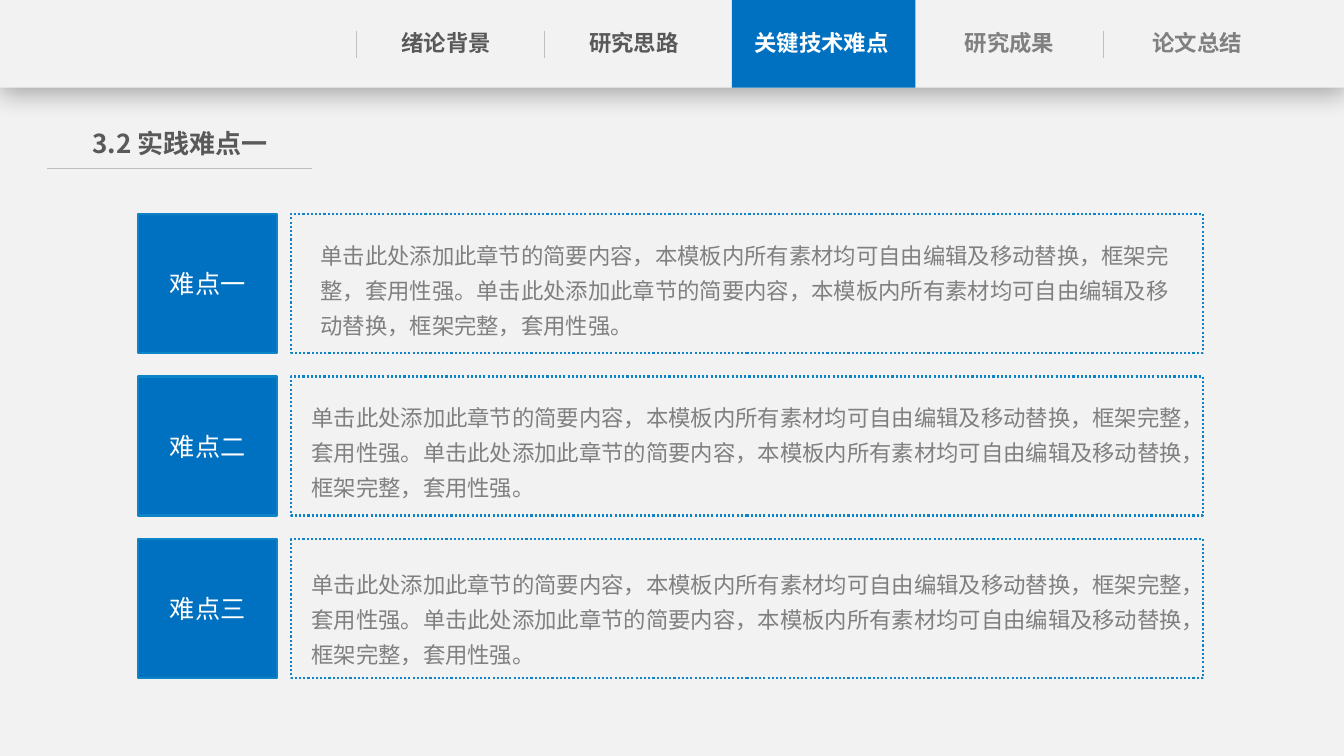
from dataclasses import dataclass

import pptx
import pptx.dml.color
import pptx.enum.dml
import pptx.enum.shapes
import pptx.enum.text
import pptx.oxml
import pptx.oxml.ns
import pptx.util
from pptx.util import Inches

RGB = pptx.dml.color.RGBColor.from_string
ALIGN = pptx.enum.text.PP_ALIGN
ANCHOR = pptx.enum.text.MSO_ANCHOR
DASH = pptx.enum.dml.MSO_LINE


@dataclass(frozen=True)
class Theme:
    font: str = "Noto Sans CJK SC"
    page: str = "F2F2F2"
    blue: str = "0070C0"
    edge: str = "0D84C8"
    rule: str = "BFBFBF"
    dark: str = "595959"
    gray: str = "808080"
    white: str = "FFFFFF"
    title: float = 18.6
    label: float = 18
    body: float = 16
    hair: float = 0.5
    frame: float = 1.5


@dataclass(frozen=True)
class Box:
    left: float
    top: float
    width: float
    height: float

    def place(self) -> tuple:
        return tuple(Inches(v) for v in (self.left, self.top, self.width, self.height))


@dataclass(frozen=True)
class Tab:
    text: str
    color: str


@dataclass(frozen=True)
class Row:
    label: str
    note: Box


THEME = Theme()
TABS = (
    Tab("绪论背景", THEME.dark),
    Tab("研究思路", THEME.dark),
    Tab("关键技术难点", THEME.white),
    Tab("研究成果", THEME.gray),
    Tab("论文总结", THEME.gray),
)
TAB_LEFT, TAB_STEP = 3.69, 1.8625
RULES = (3.53, 5.4, 10.94)
ROWS = (
    Row("难点一", Box(3.08, 2.27, 8.74, 1.15)),
    Row("难点二", Box(2.99, 3.88, 8.85, 1.15)),
    Row("难点三", Box(2.99, 5.54, 8.85, 1.15)),
)
ROW_TOP, ROW_STEP, ROW_SIZE = 2.12, 1.615, 1.38
NOTE = "单击此处添加此章节的简要内容，本模板内所有素材均可自由编辑及移动替换，框架完整，套用性强。" * 2
SHADOW = (
    f'<a:effectLst {pptx.oxml.ns.nsdecls("a")}>'
    '<a:outerShdw blurRad="228600" dist="50800" dir="5400000" algn="t" rotWithShape="0">'
    '<a:srgbClr val="000000"><a:alpha val="29000"/></a:srgbClr>'
    '</a:outerShdw></a:effectLst>'
)
TIGHT = {"margin_left": 0, "margin_right": 0}


def apply(item, values: dict) -> None:
    for name, value in values.items():
        setattr(item, name, value)


def write(shape, text: str, size: float, color: str, bold: bool = False,
          para: dict | None = None, frame: dict | None = None) -> None:
    box = shape.text_frame
    apply(box, {"word_wrap": True, "vertical_anchor": ANCHOR.TOP,
                "auto_size": pptx.enum.text.MSO_AUTO_SIZE.NONE} | (frame or {}))
    line = box.paragraphs[0]
    apply(line, {"alignment": ALIGN.CENTER} | (para or {}))
    run = line.add_run()
    run.text = text
    apply(run.font, {"size": pptx.util.Pt(size), "bold": bold, "name": THEME.font})
    run.font.color.rgb = RGB(color)
    face = pptx.oxml.parse_xml(
        f'<a:ea {pptx.oxml.ns.nsdecls("a")} typeface="{THEME.font}"/>')
    run.font._element.find(pptx.oxml.ns.qn("a:latin")).addnext(face)


def block(slide, box: Box, fill: str | None = None, edge: str | None = None,
          dash: DASH | None = None):
    """Add a rectangle without shadow; no fill or edge unless given."""
    kind = pptx.enum.shapes.MSO_SHAPE.RECTANGLE
    shape = slide.shapes.add_shape(kind, *box.place())
    shape.shadow.inherit = False
    if fill:
        shape.fill.solid()
        shape.fill.fore_color.rgb = RGB(fill)
    else:
        shape.fill.background()
    if edge:
        shape.line.color.rgb = RGB(edge)
        apply(shape.line, {"width": pptx.util.Pt(THEME.frame), "dash_style": dash})
    else:
        shape.line.fill.background()
    return shape


def rule(slide, x: float, y: float, x2: float, y2: float) -> None:
    kind = pptx.enum.shapes.MSO_CONNECTOR.STRAIGHT
    line = slide.shapes.add_connector(kind, *(Inches(v) for v in (x, y, x2, y2)))
    line.line.color.rgb = RGB(THEME.rule)
    line.line.width = pptx.util.Pt(THEME.hair)
    none = f'<a:effectLst {pptx.oxml.ns.nsdecls("a")}/>'
    line._element.spPr.append(pptx.oxml.parse_xml(none))


def header(slide) -> None:
    band = block(slide, Box(0, 0, 13.33, 0.87), THEME.page)
    props = band._element.spPr
    props.remove(props.find(pptx.oxml.ns.qn("a:effectLst")))
    props.append(pptx.oxml.parse_xml(SHADOW))
    block(slide, Box(7.26, 0, 1.82, 0.87), THEME.blue)
    for x in RULES:
        rule(slide, x, 0.31, x, 0.58)
    for i, tab in enumerate(TABS):
        spot = Box(TAB_LEFT + i * TAB_STEP, 0.24, 1.47, 0.38)
        text = slide.shapes.add_textbox(*spot.place())
        write(text, tab.text, THEME.body, tab.color, True, frame=TIGHT)


def heading(slide) -> None:
    title = slide.shapes.title
    spot = Box(0.75, 1.21, 2.07, 0.42).place()
    apply(title, dict(zip(("left", "top", "width", "height"), spot)))
    write(title, "3.2 实践难点一", THEME.title, THEME.dark, True, frame=TIGHT)
    rule(slide, 0.47, 1.67, 3.09, 1.67)


def rows(slide) -> None:
    for i, row in enumerate(ROWS):
        top = ROW_TOP + i * ROW_STEP
        label = block(slide, Box(1.37, top, ROW_SIZE, ROW_SIZE), THEME.blue, THEME.edge)
        write(label, row.label, THEME.label, THEME.white,
              frame={"vertical_anchor": ANCHOR.MIDDLE})
        block(slide, Box(2.89, top, 9.04, ROW_SIZE), None, THEME.edge, DASH.ROUND_DOT)
        note = slide.shapes.add_textbox(*row.note.place())
        write(note, NOTE, THEME.body, THEME.gray,
              para={"alignment": ALIGN.LEFT, "line_spacing": 1.3})


def main() -> None:
    deck = pptx.Presentation()
    apply(deck, {"slide_width": Inches(13.33), "slide_height": Inches(7.5)})
    slide = deck.slides.add_slide(deck.slide_layouts[5])
    slide.background.fill.solid()
    slide.background.fill.fore_color.rgb = RGB(THEME.page)
    header(slide)
    heading(slide)
    rows(slide)
    deck.save("out.pptx")


if __name__ == "__main__":
    main()
